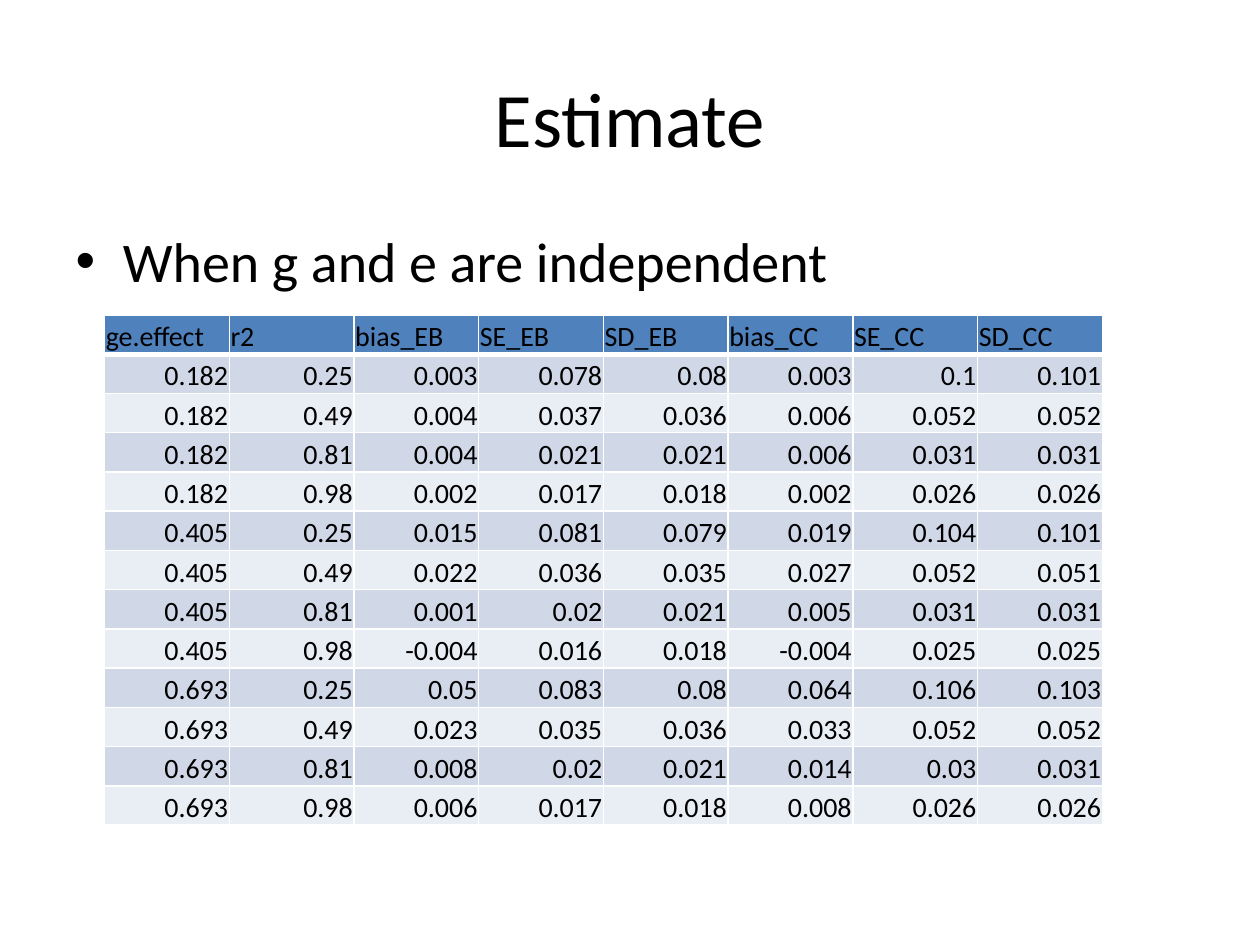
"""Build the Estimate slide: a title, one bullet and a table of simulation results."""
from pptx import Presentation
from pptx.dml.color import RGBColor
from pptx.enum.text import MSO_ANCHOR, PP_ALIGN
from pptx.oxml import parse_xml
from pptx.oxml.ns import nsdecls
from pptx.util import Inches, Pt

FONT = "Calibri"
COLORS = {
    "text": "000000",
    "header": "4F81BD",
    "odd": "D0D8E8",
    "even": "E9EDF4",
    "border": "FFFFFF",
}
HEADERS = ["ge.effect", "r2", "bias_EB", "SE_EB", "SD_EB", "bias_CC", "SE_CC", "SD_CC"]
R2 = ["0.25", "0.49", "0.81", "0.98"]
RESULTS = {
    "0.182": [
        ["0.003", "0.078", "0.08", "0.003", "0.1", "0.101"],
        ["0.004", "0.037", "0.036", "0.006", "0.052", "0.052"],
        ["0.004", "0.021", "0.021", "0.006", "0.031", "0.031"],
        ["0.002", "0.017", "0.018", "0.002", "0.026", "0.026"],
    ],
    "0.405": [
        ["0.015", "0.081", "0.079", "0.019", "0.104", "0.101"],
        ["0.022", "0.036", "0.035", "0.027", "0.052", "0.051"],
        ["0.001", "0.02", "0.021", "0.005", "0.031", "0.031"],
        ["-0.004", "0.016", "0.018", "-0.004", "0.025", "0.025"],
    ],
    "0.693": [
        ["0.05", "0.083", "0.08", "0.064", "0.106", "0.103"],
        ["0.023", "0.035", "0.036", "0.033", "0.052", "0.052"],
        ["0.008", "0.02", "0.021", "0.014", "0.03", "0.031"],
        ["0.006", "0.017", "0.018", "0.008", "0.026", "0.026"],
    ],
}


def set_text(tf, text, size, align):
    tf.text = text
    p = tf.paragraphs[0]
    p.alignment = align
    font = p.runs[0].font
    font.name = FONT
    font.size = Pt(size)
    font.bold = False
    font.color.rgb = RGBColor.from_string(COLORS["text"])


def fill_placeholder(sp, box, text, size, align, anchor):
    sp.left, sp.top, sp.width, sp.height = map(Inches, box)
    set_text(sp.text_frame, text, size, align)
    sp.text_frame.vertical_anchor = anchor


def set_borders(cell, widths):
    tcPr = cell._tc.get_or_add_tcPr()
    for side, width in zip("LRTB", widths):
        tcPr.append(parse_xml(
            f'<a:ln{side} {nsdecls("a")} w="{Pt(width)}"><a:solidFill>'
            f'<a:srgbClr val="{COLORS["border"]}"/></a:solidFill></a:ln{side}>'
        ))


def format_cell(cell, text, fill, align, widths):
    set_text(cell.text_frame, text, 16, align)
    cell.vertical_anchor = MSO_ANCHOR.BOTTOM
    cell.margin_left = cell.margin_right = cell.margin_top = Inches(0.01)
    cell.margin_bottom = 0
    set_borders(cell, widths)
    cell.fill.solid()
    cell.fill.fore_color.rgb = RGBColor.from_string(COLORS[fill])


def add_results_table(s, rows, box):
    table = s.shapes.add_table(len(rows), len(rows[0]), *map(Inches, box)).table
    for i, row in enumerate(rows):
        fill = "header" if i == 0 else "odd" if i % 2 else "even"
        align = PP_ALIGN.RIGHT if i else PP_ALIGN.LEFT
        widths = (1, 1, 3 if i == 1 else 1, 1 if i else 3)
        for j, text in enumerate(row):
            format_cell(table.cell(i, j), text, fill, align, widths)


def main():
    prs = Presentation()
    prs.slide_width, prs.slide_height = Inches(10), Inches(7.5)
    s = prs.slides.add_slide(prs.slide_layouts[1])
    title, body = s.placeholders
    fill_placeholder(title, (0.5, 0.3, 9, 1.25), "Estimate", 44,
                     PP_ALIGN.CENTER, MSO_ANCHOR.MIDDLE)
    fill_placeholder(body, (0.5, 1.75, 9, 4.95), "When g and e are independent", 32,
                     PP_ALIGN.LEFT, MSO_ANCHOR.TOP)
    rows = [HEADERS] + [
        [effect, r2, *values]
        for effect, block in RESULTS.items()
        for r2, values in zip(R2, block)
    ]
    add_results_table(s, rows, (0.83, 2.5, 7.92, 4.05))
    prs.save("out.pptx")


if __name__ == "__main__":
    main()
